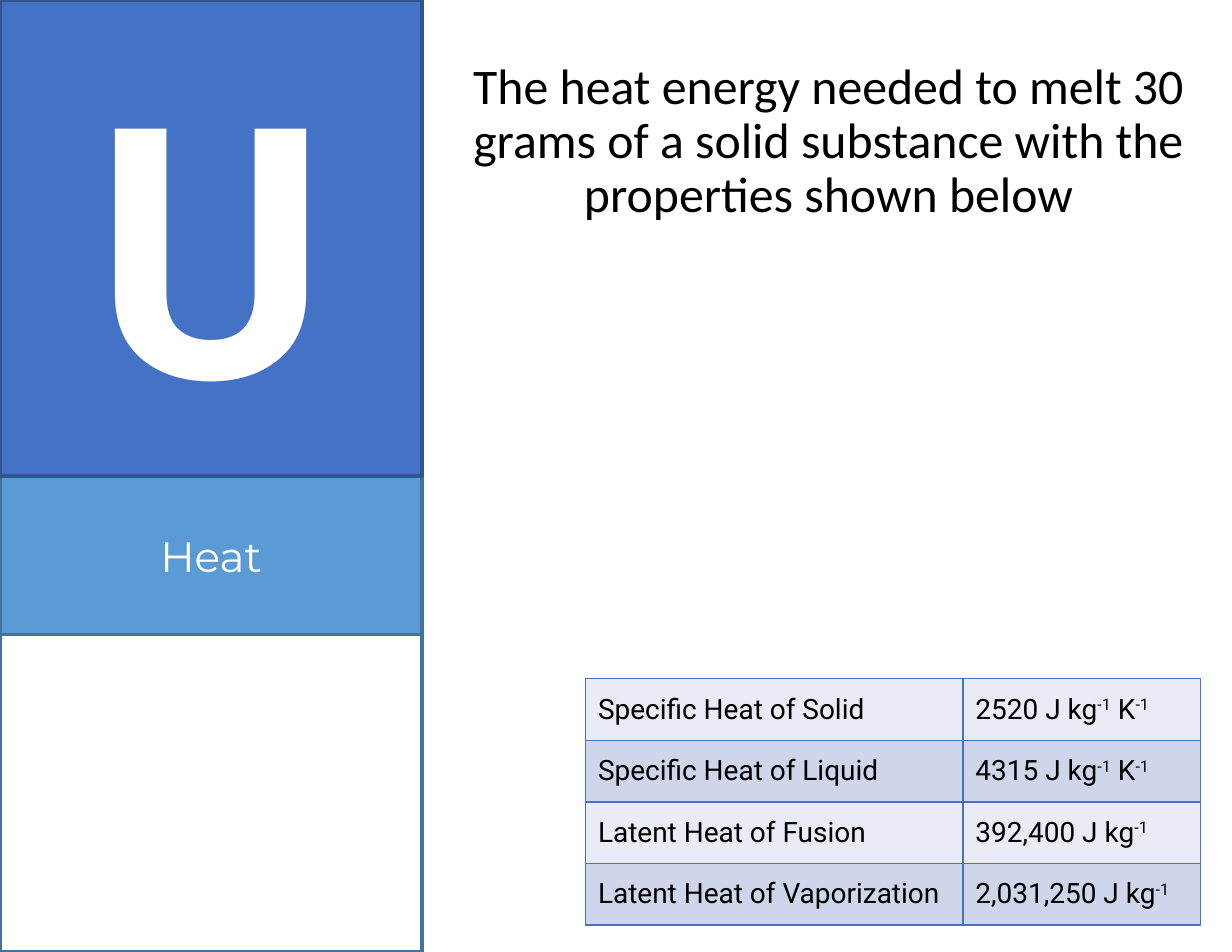
from pptx import Presentation
from pptx.dml.color import RGBColor
from pptx.enum.shapes import MSO_SHAPE
from pptx.enum.text import MSO_ANCHOR, MSO_AUTO_SIZE, PP_ALIGN
from pptx.oxml import parse_xml
from pptx.oxml.ns import nsdecls
from pptx.util import Inches, Pt

WHITE = RGBColor(0xFF, 0xFF, 0xFF)
BLACK = RGBColor(0x00, 0x00, 0x00)
BLUE = RGBColor(0x44, 0x72, 0xC4)
DARK_BLUE = RGBColor(0x32, 0x54, 0x91)
SKY = RGBColor(0x5B, 0x9B, 0xD5)
DARK_SKY = RGBColor(0x43, 0x73, 0x9E)
BANDS = [RGBColor(0xE9, 0xEB, 0xF5), RGBColor(0xCF, 0xD5, 0xEA)]

LETTER = {"name": "Roboto", "size": Pt(225.5), "bold": True}
TOPIC = {"name": "Montserrat", "size": Pt(27.2), "bold": False}
QUESTION = {"name": "Calibri", "size": Pt(32), "bold": False}
CELL = {"name": "Roboto", "size": Pt(18), "bold": False}

# "^" marks the start of a superscript, which ends at the next space
PROPERTIES = [
    ("Specific Heat of Solid", "2520 J kg^-1 K^-1"),
    ("Specific Heat of Liquid", "4315 J kg^-1 K^-1"),
    ("Latent Heat of Fusion", "392,400 J kg^-1"),
    ("Latent Heat of Vaporization", "2,031,250 J kg^-1"),
]


def add_span(para, text, style, color, raised=False):
    span = para.add_run()
    span.text = text
    for name, value in style.items():
        setattr(span.font, name, value)
    span.font.color.rgb = color
    if raised:
        span._r.get_or_add_rPr().set("baseline", "30000")


def add_panel(page, left, top, width, height, fill, line, text="", style=None):
    panel = page.shapes.add_shape(MSO_SHAPE.RECTANGLE, left, top, width, height)
    panel.shadow.inherit = False
    panel.fill.solid()
    panel.fill.fore_color.rgb = fill
    panel.line.color.rgb = line
    panel.line.width = Pt(2.25)
    if text:
        panel.text_frame.vertical_anchor = MSO_ANCHOR.MIDDLE
        para = panel.text_frame.paragraphs[0]
        para.alignment = PP_ALIGN.CENTER
        add_span(para, text, style, WHITE)


def add_sidebar(page, left, top, width, height):
    # Letter, topic and answer space share the height as 3 : 1 : 2
    unit = height // 6
    add_panel(page, left, top + 3 * unit, width, unit, SKY, DARK_SKY, "Heat", TOPIC)
    add_panel(page, left, top + 4 * unit, width, 2 * unit, WHITE, DARK_SKY)
    add_panel(page, left, top, width, 3 * unit, BLUE, DARK_BLUE, "U", LETTER)


def place_title(page, left, top, width, height, text):
    title = page.shapes.title
    title.left, title.top, title.width, title.height = left, top, width, height
    frame_format = {"word_wrap": True, "auto_size": MSO_AUTO_SIZE.NONE,
                    "vertical_anchor": MSO_ANCHOR.TOP}
    for name, value in frame_format.items():
        setattr(title.text_frame, name, value)
    para = title.text_frame.paragraphs[0]
    para.alignment = PP_ALIGN.CENTER
    para.line_spacing = 0.9
    add_span(para, text, QUESTION, BLACK)


def format_cell(cell, text, fill):
    cell_format = {"vertical_anchor": MSO_ANCHOR.MIDDLE,
                   "margin_left": Inches(0.11), "margin_right": Inches(0.11),
                   "margin_top": Inches(0.06), "margin_bottom": Inches(0.06)}
    for name, value in cell_format.items():
        setattr(cell, name, value)
    para = cell.text_frame.paragraphs[0]
    base, *rest = text.split("^")
    add_span(para, base, CELL, BLACK)
    for part in rest:
        power, gap, unit = part.partition(" ")
        add_span(para, power, CELL, BLACK, raised=True)
        if unit:
            add_span(para, gap + unit, CELL, BLACK)
    # Borders come before the fill in the cell properties
    properties = cell._tc.get_or_add_tcPr()
    for side in ("lnL", "lnR", "lnT", "lnB"):
        properties.append(parse_xml(
            f'<a:{side} {nsdecls("a")} w="{Pt(1)}"><a:solidFill>'
            f'<a:srgbClr val="{BLUE}"/></a:solidFill></a:{side}>'))
    cell.fill.solid()
    cell.fill.fore_color.rgb = fill


def add_property_table(page, left, top, width, height):
    frame = page.shapes.add_table(len(PROPERTIES), 2, left, top, width, height)
    table = frame.table
    table.first_row = False
    table.columns[0].width = Inches(3.37)
    table.columns[1].width = width - Inches(3.37)
    for row, texts in enumerate(PROPERTIES):
        for column, text in enumerate(texts):
            format_cell(table.cell(row, column), text, BANDS[row % 2])


def main():
    deck = Presentation()
    deck.slide_width, deck.slide_height = Inches(11), Inches(8.5)
    page = deck.slides.add_slide(deck.slide_layouts[5])
    add_sidebar(page, 0, 0, Inches(3.77), deck.slide_height)
    place_title(page, Inches(4.08), Inches(0.5), Inches(6.64), Inches(2.52),
                "The heat energy needed to melt 30 grams of a solid substance "
                "with the properties shown below")
    add_property_table(page, Inches(5.23), Inches(6.06), Inches(5.49), Inches(2.2))
    deck.save("out.pptx")


if __name__ == "__main__":
    main()
